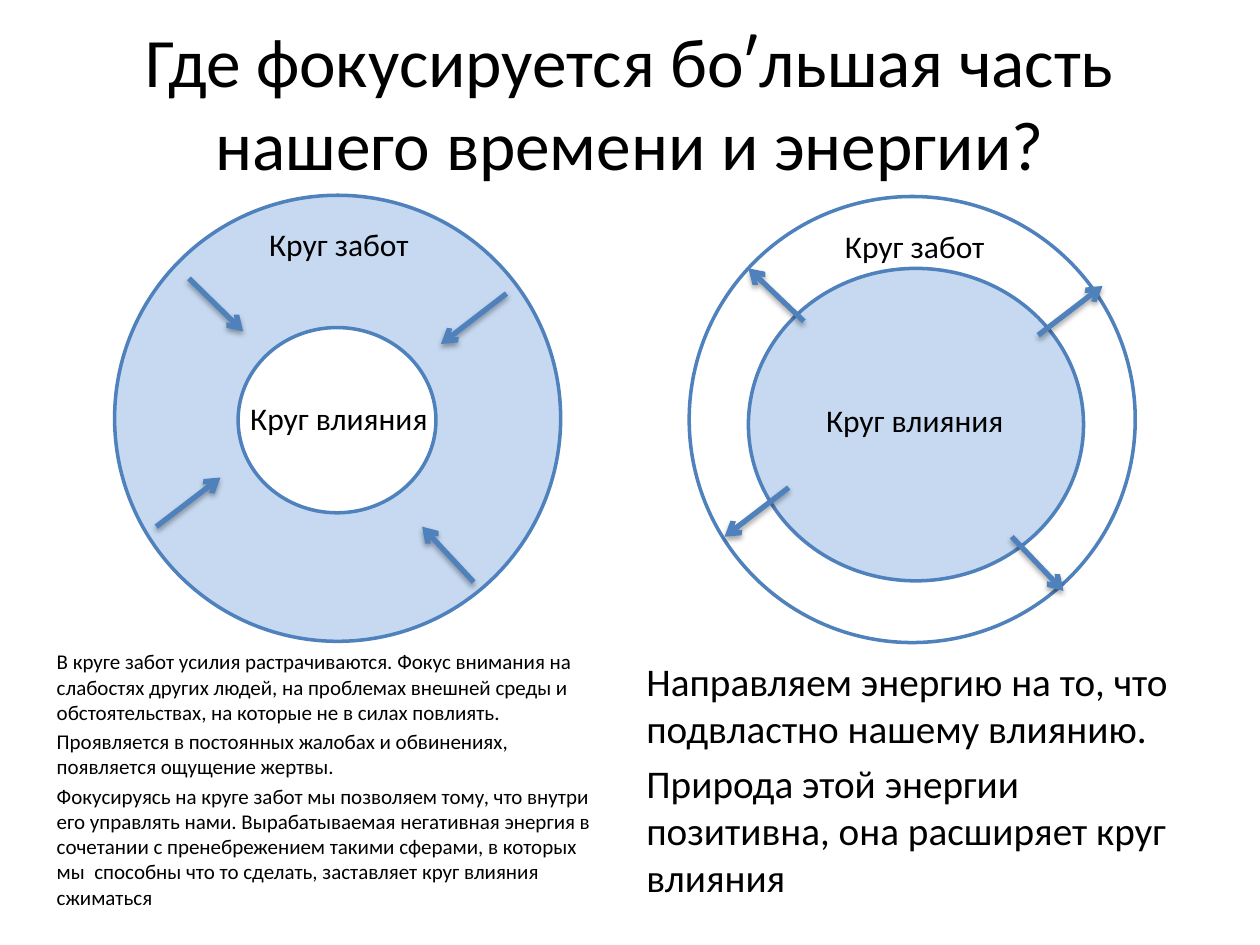
from lxml import etree
from pptx import Presentation
from pptx.dml.color import RGBColor
from pptx.enum.shapes import MSO_CONNECTOR as CONN, MSO_SHAPE as SHAPE
from pptx.enum.text import MSO_ANCHOR as ANCHOR, MSO_AUTO_SIZE as AUTO, PP_ALIGN as ALIGN
from pptx.oxml.ns import qn
from pptx.util import Inches, Pt

FONT = "Calibri"
BLACK, WHITE, BLUE, PALE = "000000", "FFFFFF", "4F81BD", "C6D9F1"

TITLE = "Где фокусируется боʹльшая часть нашего времени и энергии?"
CONCERN_NOTES = [
    "В круге забот усилия растрачиваются. Фокус внимания на слабостях других людей, "
    "на проблемах внешней среды и обстоятельствах, на которые не в силах повлиять.",
    "Проявляется в постоянных жалобах и обвинениях, появляется ощущение жертвы.",
    "Фокусируясь на круге забот мы позволяем тому, что внутри его управлять нами. "
    "Вырабатываемая негативная энергия в сочетании с пренебрежением такими сферами, "
    "в которых мы  способны что то сделать, заставляет круг влияния сжиматься",
]
INFLUENCE_NOTES = [
    "Направляем энергию на то, что подвластно нашему влиянию.",
    "Природа этой энергии позитивна, она расширяет круг влияния",
]

# Arrows as x1, y1, x2, y2
INWARD = [(4.02, 2.33, 3.5, 2.73), (3.76, 4.62, 3.35, 4.18),
          (1.5, 2.21, 1.93, 2.63), (1.24, 4.18, 1.75, 3.79)]
OUTWARD = [(8.24, 2.66, 8.75, 2.27), (8.03, 4.26, 8.44, 4.69),
           (6.38, 2.55, 5.94, 2.13), (6.26, 3.87, 5.75, 4.26)]


def rgb(color):
    return RGBColor.from_string(color)


def inches(*values):
    return [Inches(v) for v in values]


def place(sp, box):
    sp.left, sp.top, sp.width, sp.height = inches(*box)


def write(sp, lines, size, align, anchor):
    tf = sp.text_frame
    tf.text = "\n".join(lines)
    tf.word_wrap = True
    tf.auto_size = AUTO.NONE
    tf.vertical_anchor = anchor
    for p in tf.paragraphs:
        p.alignment = align
        for r in p.runs:
            r.font.name, r.font.size = FONT, Pt(size)
            r.font.color.rgb = rgb(BLACK)


def add_notes(sp, box, lines, size):
    place(sp, box)
    write(sp, lines, size, ALIGN.LEFT, ANCHOR.TOP)
    # Plain paragraphs without bullets
    for p in sp.text_frame.paragraphs:
        pPr = p._p.get_or_add_pPr()
        pPr.set("marL", "0")
        pPr.set("indent", "0")
        etree.SubElement(pPr, qn("a:buNone"))


def add_circle(s, box, fill):
    sp = s.shapes.add_shape(SHAPE.OVAL, *inches(*box))
    sp.shadow.inherit = False
    sp.fill.solid()
    sp.fill.fore_color.rgb = rgb(fill)
    sp.line.color.rgb = rgb(BLUE)
    sp.line.width = Pt(2)


def add_label(s, left, top, text):
    sp = s.shapes.add_textbox(*inches(left, top, 1.96, 0.63))
    write(sp, [text], 18, ALIGN.CENTER, ANCHOR.MIDDLE)


def add_arrow(s, ends):
    line = s.shapes.add_connector(CONN.STRAIGHT, *inches(*ends))
    line.line.color.rgb = rgb(BLUE)
    line.line.width = Pt(3)
    spPr = line.element.spPr
    etree.SubElement(spPr.find(qn("a:ln")), qn("a:tailEnd"), type="arrow")
    # Soft shadow straight below
    effects = etree.SubElement(spPr, qn("a:effectLst"))
    shadow = etree.SubElement(effects, qn("a:outerShdw"), blurRad=str(Pt(3.1)),
                              dist=str(Pt(1.8)), dir="5400000", rotWithShape="0")
    color = etree.SubElement(shadow, qn("a:srgbClr"), val=BLACK)
    etree.SubElement(color, qn("a:alpha"), val="35000")


def add_diagram(s, outer, inner, fills, label_left, label_tops, arrows):
    for box, fill in zip((outer, inner), fills):
        add_circle(s, box, fill)
    for top, text in zip(label_tops, ("Круг забот", "Круг влияния")):
        add_label(s, label_left, top, text)
    for ends in arrows:
        add_arrow(s, ends)


def main():
    prs = Presentation()
    prs.slide_width, prs.slide_height = inches(10, 7.5)
    s = prs.slides.add_slide(prs.slide_layouts[3])
    title, left_body, right_body = s.placeholders

    # Title
    place(title, (0.5, 0.3, 9, 1.01))
    write(title, [TITLE], 39.6, ALIGN.CENTER, ANCHOR.MIDDLE)

    # Focus on concerns: influence shrinks
    add_diagram(s, (0.91, 1.55, 3.54, 3.54), (1.89, 2.6, 1.57, 1.47),
                (PALE, WHITE), 1.71, (1.62, 3), INWARD)
    add_notes(left_body, (0.35, 5.1, 4.57, 2.11), CONCERN_NOTES, 12)

    # Focus on influence: influence grows
    add_diagram(s, (5.47, 1.56, 3.54, 3.54), (5.94, 2.13, 2.66, 2.48),
                (WHITE, PALE), 6.28, (1.64, 3.02), OUTWARD)
    add_notes(right_body, (5.03, 5.17, 4.49, 1.89), INFLUENCE_NOTES, 22.4)

    prs.save("out.pptx")


if __name__ == "__main__":
    main()
